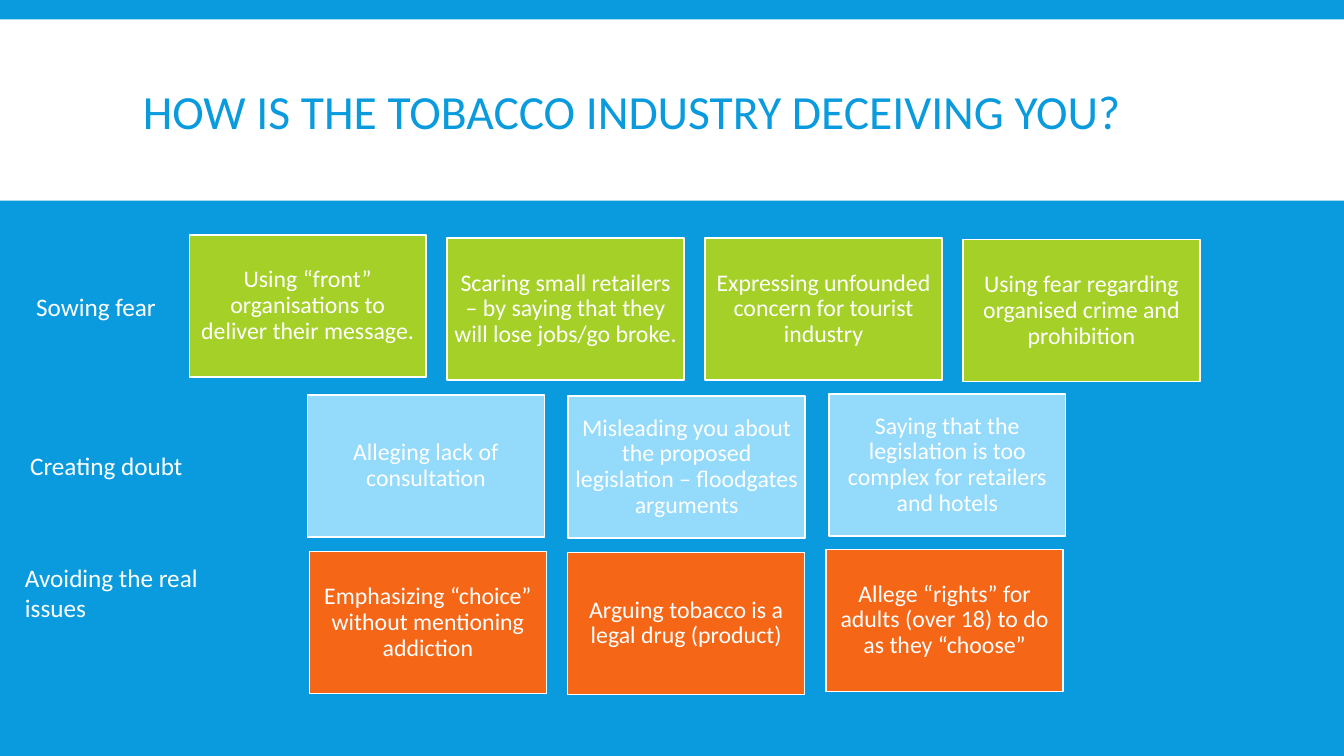
from pptx import Presentation
from pptx.dml.color import RGBColor
from pptx.enum.shapes import MSO_SHAPE
from pptx.enum.text import MSO_ANCHOR, PP_ALIGN
from pptx.util import Cm, Pt

BLUE, WHITE = "099BDD", "FFFFFF"
GREEN, SKY, ORANGE = "A5D028", "93DAFB", "F56617"
CARD_W, CARD_H = 5.97, 3.58

# Label, its box, card colour, first card's left, pitch, (top, text) of each card
ROWS = [
    ("Sowing fear", (0.66, 7.21, 3.68, 1.02), False, GREEN, 4.77, 6.5, [
        (5.92, "Using “front” organisations to deliver their message."),
        (6, "Scaring small retailers – by saying that they "
            "will lose jobs/go broke."),
        (6, "Expressing unfounded concern for tourist industry"),
        (6.04, "Using fear regarding organised crime and prohibition")]),
    ("Creating doubt", (0.51, 11.23, 4.5, 1.02), False, SKY, 7.75, 6.57, [
        (9.95, "Alleging lack of consultation"),
        (9.98, "Misleading you about the proposed legislation – "
               "floodgates arguments"),
        (9.93, "Saying that the legislation is too complex "
               "for retailers and hotels")]),
    ("Avoiding the real issues", (0.38, 14.05, 6.4, 1.8), True, ORANGE, 7.8, 6.51, [
        (13.9, "Emphasizing “choice” without mentioning addiction"),
        (13.92, "Arguing tobacco is a legal drug (product)"),
        (13.84, "Allege “rights” for adults (over 18) to do "
                "as they “choose”")]),
]


def color(code):
    return RGBColor.from_string(code)


def write(shape, text, size=18, ink=WHITE, align=PP_ALIGN.LEFT,
          anchor=MSO_ANCHOR.TOP, space=1.0, wrap=True, inset=None):
    frame = shape.text_frame
    frame.word_wrap = wrap
    frame.vertical_anchor = anchor
    if inset is not None:
        frame.margin_left = frame.margin_right = Cm(inset)
        frame.margin_top = frame.margin_bottom = Cm(inset)
    para = frame.paragraphs[0]
    para.alignment = align
    para.line_spacing = space
    run = para.add_run()
    run.text = text
    run.font.name = "Calibri"
    run.font.size = Pt(size)
    run.font.color.rgb = color(ink)


def block(slide, box, fill, line=None):
    shape = slide.shapes.add_shape(MSO_SHAPE.RECTANGLE, *map(Cm, box))
    shape.shadow.inherit = False
    shape.fill.solid()
    shape.fill.fore_color.rgb = color(fill)
    if line:
        shape.line.color.rgb = color(line)
        shape.line.width = Pt(1)
    else:
        shape.line.fill.background()
    return shape


def header(slide, box):
    left, top, width, height = box
    block(slide, box, WHITE)
    title = slide.shapes.add_textbox(
        Cm(left + 3.35), Cm(top + 0.3), Cm(width - 6.7), Cm(height - 0.38))
    write(title, "HOW IS THE TOBACCO INDUSTRY DECEIVING YOU?", size=34,
          ink=BLUE, anchor=MSO_ANCHOR.MIDDLE, space=0.85)


def theme_row(slide, label, box, wrap, fill, left, pitch, cards):
    write(slide.shapes.add_textbox(*map(Cm, box)), label, wrap=wrap)
    for i, (top, text) in enumerate(cards):
        card = block(slide, (left + i * pitch, top, CARD_W, CARD_H), fill, WHITE)
        write(card, text, size=17, align=PP_ALIGN.CENTER,
              anchor=MSO_ANCHOR.MIDDLE, space=0.9, inset=0.18)


def main():
    deck = Presentation()
    deck.slide_width, deck.slide_height = Cm(33.87), Cm(19.05)
    slide = deck.slides.add_slide(deck.slide_layouts[6])

    # Backdrop and title band
    slide.background.fill.solid()
    slide.background.fill.fore_color.rgb = color(BLUE)
    header(slide, (0, 0.49, 33.87, 4.57))

    # Rows of tactics
    for row in ROWS:
        theme_row(slide, *row)
    deck.save("out.pptx")


if __name__ == "__main__":
    main()
